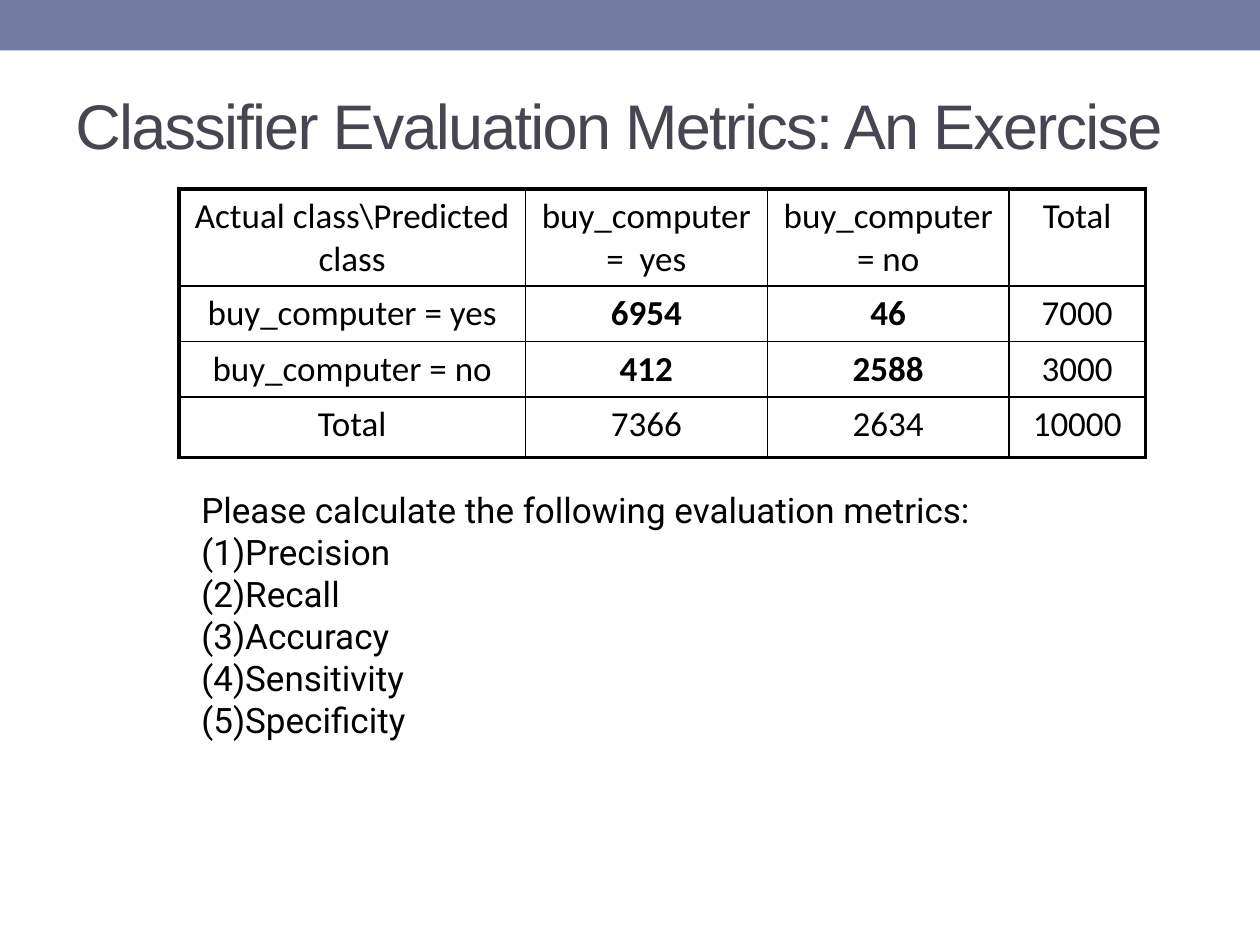
"""Builds a slide with a confusion matrix and an exercise on classifier metrics."""
import pptx
import pptx.util
import pptx.dml.color
import pptx.enum.shapes
import pptx.enum.text
import pptx.oxml.ns
import lxml.etree

Inches, Pt = pptx.util.Inches, pptx.util.Pt
COLORS = {"band": "727CA3", "title": "464653", "text": "000000", "border": "000000"}
TITLE = "Classifier Evaluation Metrics: An Exercise"
MATRIX = [
    ("Actual class\\Predicted class", "buy_computer =  yes", "buy_computer = no", "Total"),
    ("buy_computer = yes", "6954", "46", "7000"),
    ("buy_computer = no", "412", "2588", "3000"),
    ("Total", "7366", "2634", "10000"),
]
COLUMN_WIDTHS = [2.75, 1.92, 1.92, 1.08]
ROW_HEIGHTS = [0.77, 0.44, 0.44, 0.48]
COUNTS = {(1, 1), (1, 2), (2, 1), (2, 2)}
PROMPT = "Please calculate the following evaluation metrics:"
METRICS = ["Precision", "Recall", "Accuracy", "Sensitivity", "Specificity"]
THICK, THIN = 2.25, 1


def rgb(name):
    return pptx.dml.color.RGBColor.from_string(COLORS[name])


def add_child(parent, tag, **attributes):
    return lxml.etree.SubElement(parent, pptx.oxml.ns.qn(tag), **attributes)


def style(para, font_name, size, color):
    para.font.name = font_name
    para.font.size = Pt(size)
    para.font.color.rgb = rgb(color)


def add_box(page, left, top, width, height):
    box = page.shapes.add_textbox(Inches(left), Inches(top), Inches(width), Inches(height))
    box.text_frame.word_wrap = True
    return box.text_frame


def add_band(page, width):
    band = page.shapes.add_shape(
        pptx.enum.shapes.MSO_SHAPE.RECTANGLE, 0, 0, width, Inches(0.4))
    band.shadow.inherit = False
    band.fill.solid()
    band.fill.fore_color.rgb = rgb("band")
    band.line.fill.background()


def add_title(page):
    frame = add_box(page, 0.5, 0.58, 9, 0.81)
    frame.vertical_anchor = pptx.enum.text.MSO_ANCHOR.MIDDLE
    para = frame.paragraphs[0]
    span = para.add_run()
    span.text = TITLE
    span._r.get_or_add_rPr().set("spc", "-100")
    style(para, "Arial", 36, "title")


def set_borders(cell, row, column):
    outer = {
        "a:lnL": column == 0,
        "a:lnR": column == len(COLUMN_WIDTHS) - 1,
        "a:lnT": row == 0,
        "a:lnB": row == len(ROW_HEIGHTS) - 1,
    }
    properties = cell._tc.get_or_add_tcPr()
    for tag, is_outer in outer.items():
        line = add_child(properties, tag, w=str(Pt(THICK if is_outer else THIN)))
        add_child(add_child(line, "a:solidFill"), "a:srgbClr", val=COLORS["border"])


def add_matrix(page):
    table = page.shapes.add_table(
        len(ROW_HEIGHTS), len(COLUMN_WIDTHS), Inches(1.42), Inches(1.5),
        Inches(sum(COLUMN_WIDTHS)), Inches(sum(ROW_HEIGHTS))).table
    table.first_row = table.horz_banding = False
    for column, width in zip(table.columns, COLUMN_WIDTHS):
        column.width = Inches(width)
    for row, height in zip(table.rows, ROW_HEIGHTS):
        row.height = Inches(height)
    for row, values in enumerate(MATRIX):
        for column, value in enumerate(values):
            cell = table.cell(row, column)
            cell.text = value
            set_borders(cell, row, column)
            cell.fill.background()
            para = cell.text_frame.paragraphs[0]
            para.alignment = pptx.enum.text.PP_ALIGN.CENTER
            style(para, "Calibri", 20, "text")
            para.font.bold = (row, column) in COUNTS


def add_exercise(page):
    frame = add_box(page, 1.5, 3.83, 6.67, 2.46)
    frame.text = "\n".join([PROMPT] + METRICS)
    for para in frame.paragraphs:
        style(para, "Roboto", 20, "text")
    for para in frame.paragraphs[1:]:
        number = lxml.etree.Element(pptx.oxml.ns.qn("a:buAutoNum"), type="arabicParenBoth")
        para._p.get_or_add_pPr().insert(0, number)


def main():
    deck = pptx.Presentation()
    deck.slide_width, deck.slide_height = Inches(10), Inches(7.5)
    page = deck.slides.add_slide(deck.slide_layouts[6])
    add_band(page, deck.slide_width)
    add_title(page)
    add_matrix(page)
    add_exercise(page)
    deck.save("out.pptx")


if __name__ == "__main__":
    main()
